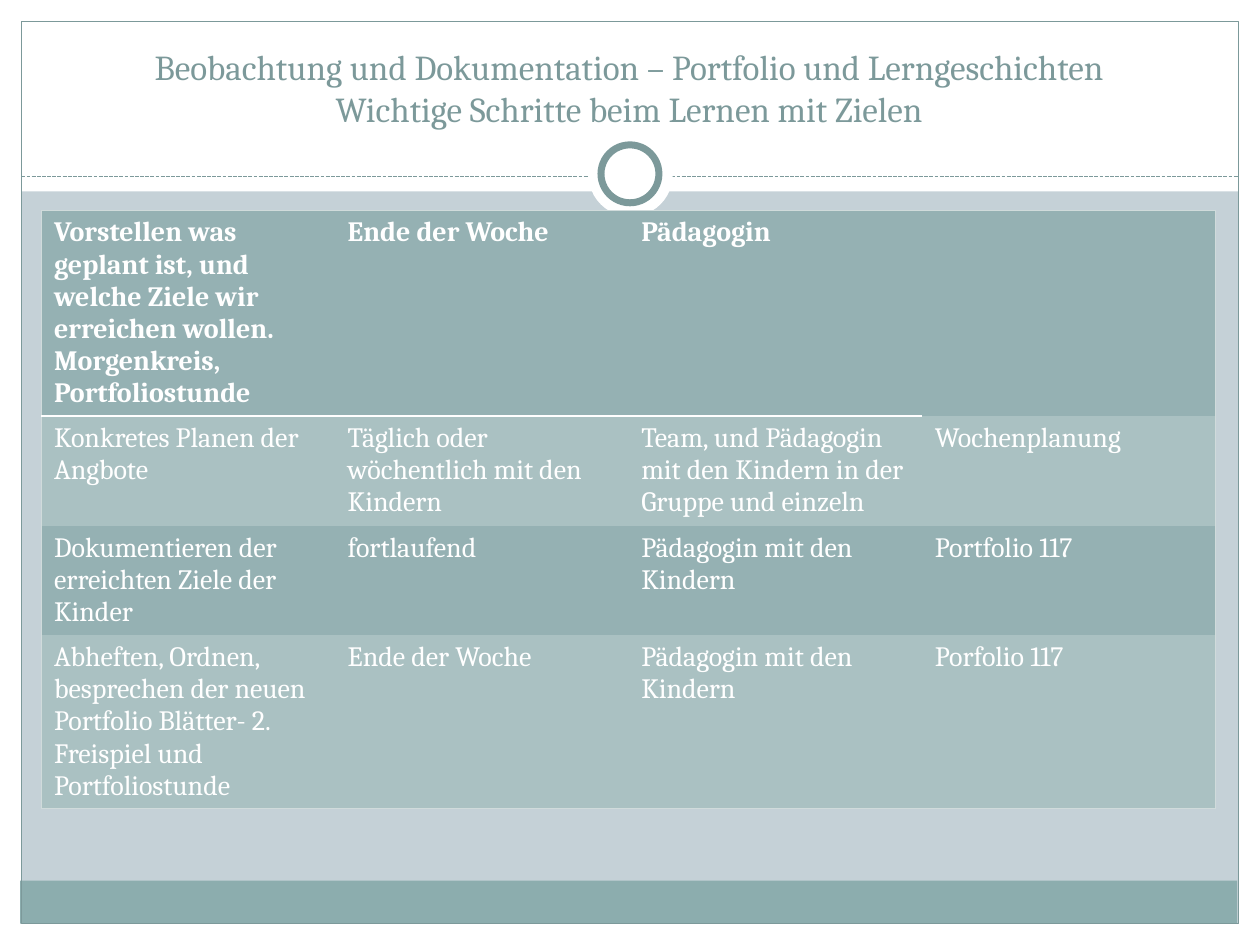
from copy import deepcopy
from dataclasses import dataclass

from lxml.etree import SubElement
from pptx import Presentation
from pptx.dml.color import RGBColor
from pptx.enum.dml import MSO_LINE_DASH_STYLE as Dash
from pptx.enum.shapes import MSO_CONNECTOR as Connector, MSO_SHAPE as Shape
from pptx.enum.text import MSO_ANCHOR as Anchor, PP_ALIGN as Align
from pptx.oxml.ns import qn
from pptx.util import Inches, Pt


@dataclass(frozen=True)
class Theme:
    font: str = "Cambria"
    title_size: int = 20
    table_size: int = 16
    white: str = "FFFFFF"
    background: str = "C5D1D7"
    footer: str = "8CADAE"
    accent: str = "7C999A"
    dark_row: str = "95B1B3"
    light_row: str = "AAC1C2"
    table_edge: str = "D0DBDB"


THEME = Theme()
NO_TABLE_STYLE = "{2D5ABB26-0587-4C30-8999-92F81FD0307C}"

TITLE = ("Beobachtung und Dokumentation – Portfolio und Lerngeschichten\v"
         "Wichtige Schritte beim Lernen mit Zielen")
STEPS = [
    ["Vorstellen was geplant ist, und welche Ziele wir erreichen wollen.\n"
     "Morgenkreis, Portfoliostunde", "Ende der Woche", "Pädagogin", ""],
    ["Konkretes Planen der Angbote", "Täglich oder wöchentlich mit den Kindern",
     "Team, und Pädagogin mit den Kindern in der Gruppe und einzeln", "Wochenplanung"],
    ["Dokumentieren der erreichten Ziele der Kinder", "fortlaufend",
     "Pädagogin mit den Kindern", "Portfolio 117"],
    ["Abheften, Ordnen, besprechen der neuen Portfolio Blätter- 2. "
     "Freispiel und Portfoliostunde", "Ende der Woche",
     "Pädagogin mit den Kindern", "Porfolio 117"],
]
ROW_HEIGHTS = [1.63, 0.87, 0.87, 1.37]
COLUMN_WIDTH = 2.33


def rgb(color):
    return RGBColor.from_string(color)


def write(frame, text, *, size, color, bold=False, align=Align.LEFT):
    frame.text = text
    for paragraph in frame.paragraphs:
        paragraph.alignment = align
        for run in paragraph.runs:
            run.font.name = THEME.font
            run.font.size = Pt(size)
            run.font.bold = bold
            run.font.color.rgb = rgb(color)
        for line_break in paragraph._p.findall(qn("a:br")):
            line_break.append(deepcopy(paragraph.runs[0]._r.rPr))


def add_panel(slide, kind, box, *, fill=None, line=None, width=0.75):
    panel = slide.shapes.add_shape(kind, *map(Inches, box))
    panel.shadow.inherit = False
    if fill:
        panel.fill.solid()
        panel.fill.fore_color.rgb = rgb(fill)
    else:
        panel.fill.background()
    if line:
        panel.line.color.rgb = rgb(line)
        panel.line.width = Pt(width)
    else:
        panel.line.fill.background()


def add_divider(slide, left, right, y):
    divider = slide.shapes.add_connector(
        Connector.STRAIGHT, Inches(left), Inches(y), Inches(right), Inches(y))
    divider.line.color.rgb = rgb(THEME.accent)
    divider.line.width = Pt(0.75)
    divider.line.dash_style = Dash.SQUARE_DOT
    SubElement(divider._element.spPr, qn("a:effectLst"))


def add_border(cell, side, color, width):
    border = SubElement(cell._tc.get_or_add_tcPr(), qn(f"a:ln{side}"), w=str(Pt(width)))
    SubElement(SubElement(border, qn("a:solidFill")), qn("a:srgbClr"), val=color)


def format_cell(cell, row, column):
    last_row, last_column = len(STEPS) - 1, len(STEPS[0]) - 1
    edges = {"L": column == 0, "R": column == last_column,
             "T": row == 0, "B": row == last_row}
    for side, outer in edges.items():
        if outer:
            add_border(cell, side, THEME.table_edge, 0.75)
        elif side == "B" and row == 0 and column < last_column:
            add_border(cell, side, THEME.white, 1.57)
    cell.fill.solid()
    cell.fill.fore_color.rgb = rgb(THEME.light_row if row % 2 else THEME.dark_row)
    write(cell.text_frame, STEPS[row][column], size=THEME.table_size,
          color=THEME.white, bold=row == 0)


def add_steps_table(slide, left, top):
    columns = len(STEPS[0])
    table = slide.shapes.add_table(
        len(STEPS), columns, Inches(left), Inches(top),
        Inches(columns * COLUMN_WIDTH), Inches(sum(ROW_HEIGHTS))).table
    table.horz_banding = False
    table._tbl.tblPr.find(qn("a:tableStyleId")).text = NO_TABLE_STYLE
    for column in table.columns:
        column.width = Inches(COLUMN_WIDTH)
    for row, height in enumerate(ROW_HEIGHTS):
        table.rows[row].height = Inches(height)
        for column in range(columns):
            format_cell(table.cell(row, column), row, column)


def add_backdrop(slide):
    slide.background.fill.solid()
    slide.background.fill.fore_color.rgb = rgb(THEME.background)
    margins = [(0, 7.33, 10, 0.17), (0, 0, 10, 1.52),
               (0, 0, 0.17, 7.5), (9.83, 0, 0.17, 7.5)]
    for box in margins:
        add_panel(slide, Shape.RECTANGLE, box, fill=THEME.white)
    add_panel(slide, Shape.RECTANGLE, (0.16, 6.99, 9.66, 0.34), fill=THEME.footer)
    add_panel(slide, Shape.RECTANGLE, (0.17, 0.17, 9.66, 7.16), line=THEME.accent)
    add_divider(slide, 0.17, 9.83, 1.4)
    add_panel(slide, Shape.OVAL, (4.67, 1.05, 0.67, 0.67), fill=THEME.white)
    add_panel(slide, Shape.OVAL, (4.77, 1.15, 0.46, 0.46),
              fill=THEME.white, line=THEME.accent, width=4)


def place_title(slide):
    title = slide.shapes.title
    title.left, title.top, title.width, title.height = map(
        Inches, (0.33, 0.25, 9.33, 0.83))
    title.text_frame.vertical_anchor = Anchor.BOTTOM
    write(title.text_frame, TITLE, size=THEME.title_size,
          color=THEME.accent, align=Align.CENTER)
    slide.shapes._spTree.append(title._element)


def main():
    deck = Presentation()
    deck.slide_width, deck.slide_height = Inches(10), Inches(7.5)
    slide = deck.slides.add_slide(deck.slide_layouts.get_by_name("Title Only"))
    add_backdrop(slide)
    place_title(slide)
    add_steps_table(slide, 0.33, 1.67)
    deck.save("out.pptx")


if __name__ == "__main__":
    main()
